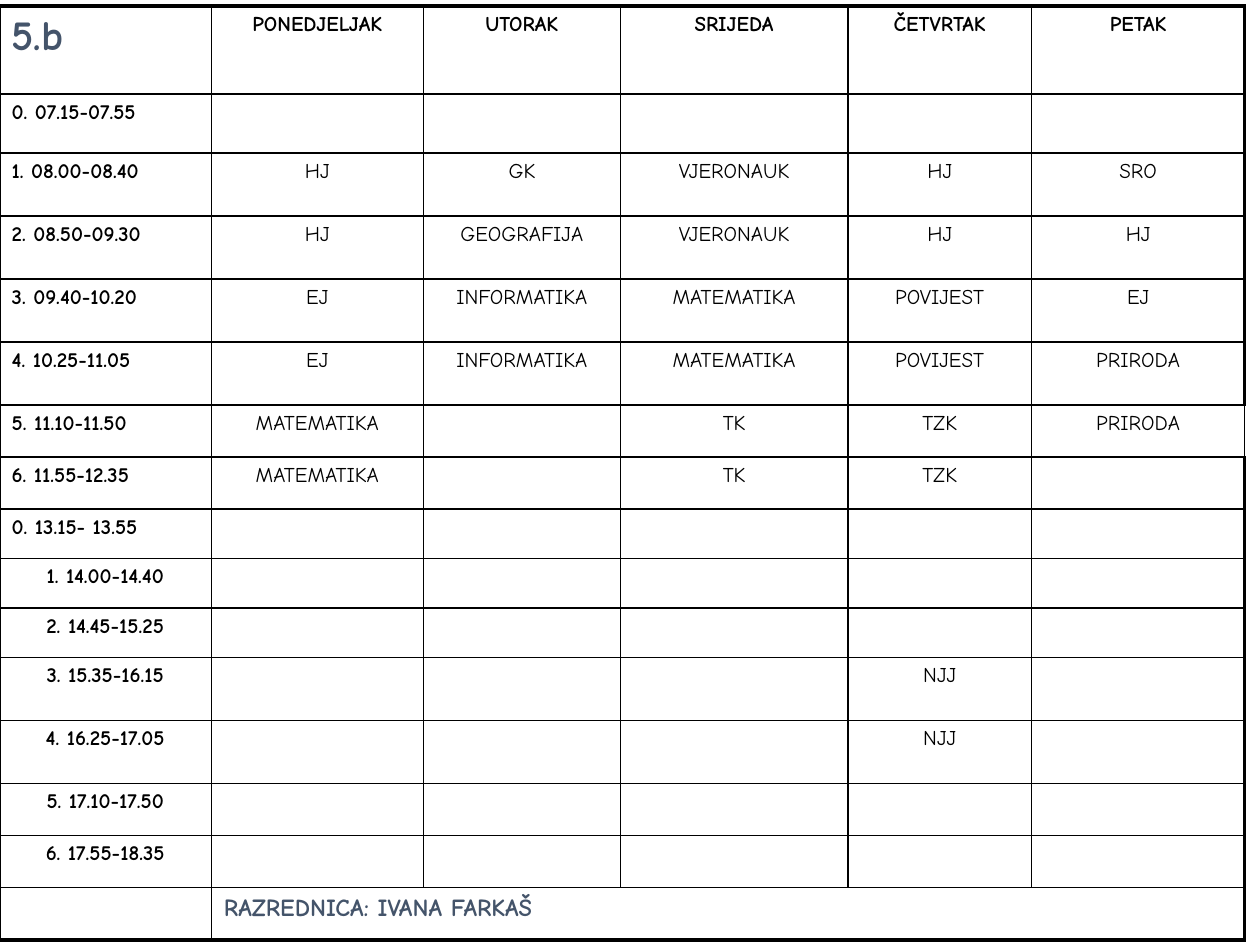
from dataclasses import dataclass

from lxml import etree
from pptx import Presentation
from pptx import util as u
from pptx.dml import color
from pptx.enum import text
from pptx.oxml import ns


@dataclass(frozen=True)
class Theme:
    font: str = "Comic Neue"
    ink: str = "000000"
    accent: str = "44546A"
    body: int = 12
    footer: int = 14
    title: int = 24
    thin: float = 1
    thick: float = 2.25


DAYS = ["PONEDJELJAK", "UTORAK", "SRIJEDA", "ČETVRTAK", "PETAK"]
MORNING = [
    ("0. 07.15-07.55", ["", "", "", "", ""]),
    ("1. 08.00-08.40", ["HJ", "GK", "VJERONAUK", "HJ", "SRO"]),
    ("2. 08.50-09.30", ["HJ", "GEOGRAFIJA", "VJERONAUK", "HJ", "HJ"]),
    ("3. 09.40-10.20", ["EJ", "INFORMATIKA", "MATEMATIKA", "POVIJEST", "EJ"]),
    ("4. 10.25-11.05", ["EJ", "INFORMATIKA", "MATEMATIKA", "POVIJEST", "PRIRODA"]),
    ("5. 11.10-11.50", ["MATEMATIKA", "", "TK", "TZK", "PRIRODA"]),
    ("6. 11.55-12.35", ["MATEMATIKA", "", "TK", "TZK", ""]),
    ("0. 13.15- 13.55", ["", "", "", "", ""]),
]
AFTERNOON = [
    ("1. 14.00-14.40", ["", "", "", "", ""]),
    ("2. 14.45-15.25", ["", "", "", "", ""]),
    ("3. 15.35-16.15", ["", "", "", "NJJ", ""]),
    ("4. 16.25-17.05", ["", "", "", "NJJ", ""]),
    ("5. 17.10-17.50", ["", "", "", "", ""]),
    ("6. 17.55-18.35", ["", "", "", "", ""]),
]
COLUMN_WIDTHS = [121.3, 121.1, 112.7, 129.9, 105.1, 121.7]
ROW_HEIGHTS = ([50.4, 33.7] + [36] * 4 + [29.7] * 2 + [28.3] * 3
               + [36] * 2 + [29.8] * 3)
THIN_EDGE_ROW = 6


def write(paragraph, words, theme, size=None, tint=None, bold=False, centered=False):
    size = size or theme.body
    if centered:
        paragraph.alignment = text.PP_ALIGN.CENTER
    if not words:
        end = etree.SubElement(paragraph._p, ns.qn("a:endParaRPr"))
        end.set("sz", str(size * 100))
        return
    span = paragraph.add_run()
    span.text = words
    span.font.name = theme.font
    span.font.size = u.Pt(size)
    span.font.bold = bold
    span.font.color.rgb = color.RGBColor.from_string(tint or theme.ink)


class TimetablePage:
    def __init__(self, deck, theme):
        self.theme = theme
        self.page = deck.slides.add_slide(deck.slide_layouts[6])

    def grid(self, left, top, widths, heights):
        frame = self.page.shapes.add_table(
            len(heights), len(widths), u.Pt(left), u.Pt(top),
            u.Pt(sum(widths)), u.Pt(sum(heights)))
        table = frame.table
        table.first_row = table.horz_banding = False
        for column, width in zip(table.columns, widths):
            column.width = u.Pt(width)
        for row, height in zip(table.rows, heights):
            row.height = u.Pt(height)
        return table

    def borders(self, cell, **widths):
        properties = cell._tc.get_or_add_tcPr()
        for side in "LRTB":
            line = etree.SubElement(properties, ns.qn(f"a:ln{side}"))
            line.set("w", str(int(u.Pt(widths[side]))))
            fill = etree.SubElement(line, ns.qn("a:solidFill"))
            etree.SubElement(fill, ns.qn("a:srgbClr")).set("val", self.theme.ink)

    def frame(self, table):
        thin, thick = self.theme.thin, self.theme.thick
        last_row, last_column = len(table.rows) - 1, len(table.columns) - 1
        for r in range(last_row + 1):
            for c in range(last_column + 1):
                cell = table.cell(r, c)
                if cell.is_spanned:
                    continue
                end = c + (cell.span_width if cell.is_merge_origin else 1) - 1
                outer = end == last_column and r != THIN_EDGE_ROW
                self.borders(cell,
                             L=thick if c == 0 else thin,
                             R=thick if outer else thin,
                             T=thick if r == 0 else thin,
                             B=thick if r == last_row else thin)
                cell.fill.background()

    def cell(self, table, row, column, words, **style):
        write(table.cell(row, column).text_frame.paragraphs[0], words, self.theme, **style)

    def lesson_row(self, table, row, label, lessons, label_style, bold=False):
        self.cell(table, row, 0, label, **label_style)
        for column, lesson in enumerate(lessons, 1):
            self.cell(table, row, column, lesson, bold=bold, centered=True)


def main():
    theme = Theme()
    deck = Presentation()
    deck.slide_width, deck.slide_height = u.Pt(720), u.Pt(540)
    timetable = TimetablePage(deck, theme)
    table = timetable.grid(-0.5, 3.4, COLUMN_WIDTHS, ROW_HEIGHTS)
    footer = len(ROW_HEIGHTS) - 1
    table.cell(footer, 1).merge(table.cell(footer, len(DAYS)))
    timetable.frame(table)

    heading = dict(size=theme.title, tint=theme.accent, bold=True)
    timetable.lesson_row(table, 0, "5.b", DAYS, heading, bold=True)
    for row, (label, lessons) in enumerate(MORNING + AFTERNOON, 1):
        style = dict(bold=True, centered=row > len(MORNING))
        timetable.lesson_row(table, row, label, lessons, style)
    timetable.cell(table, footer, 0, "")
    timetable.cell(table, footer, 1, "RAZREDNICA: IVANA FARKAŠ",
                   size=theme.footer, tint=theme.accent, bold=True)
    deck.save("out.pptx")


if __name__ == "__main__":
    main()
